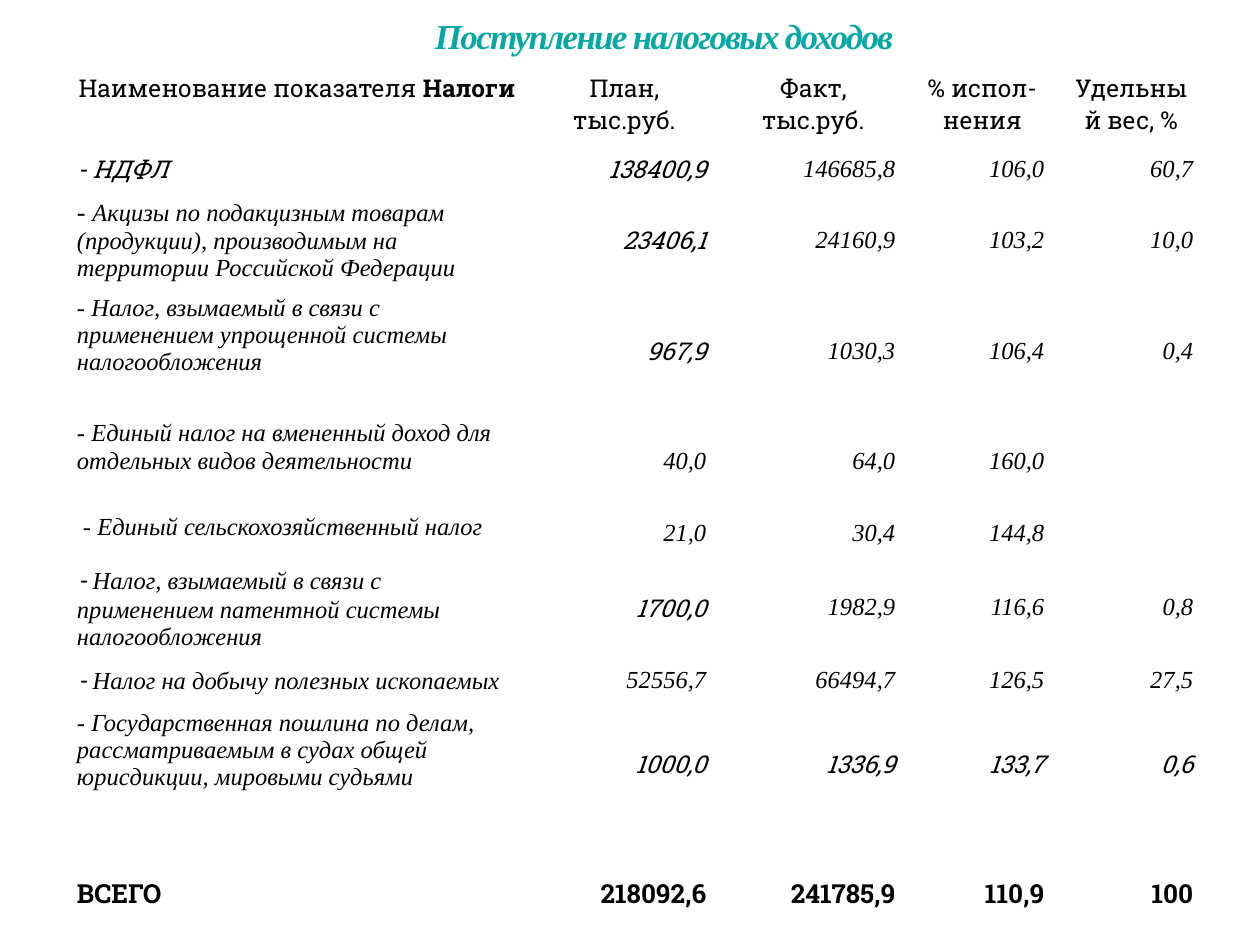
from dataclasses import dataclass

from lxml.etree import SubElement
from pptx import Presentation
from pptx.dml.color import RGBColor as Rgb
from pptx.enum.text import MSO_ANCHOR as Anchor, PP_ALIGN as Align
from pptx.oxml.ns import qn
from pptx.util import Emu, Pt

PX = 914400 // 126
HUES = {"text": "000000", "title": "04A8A4", "edge": "AFCCDE"}
SLAB, TIMES = "Roboto Slab", "Times New Roman"
FACES = {"S": SLAB, "T": TIMES}


@dataclass(frozen=True)
class Style:
    face: str = TIMES
    size: int = 14
    bold: bool = False
    slant: bool = True
    hue: str = "text"


@dataclass(frozen=True)
class Part:
    text: str
    style: Style


@dataclass(frozen=True)
class Row:
    high: int
    label: list[Part]
    vals: tuple[str, ...] = ()
    faces: str = "TTTT"
    pad: int = 13


HEAD = Style(SLAB, slant=False)
STRONG = Style(SLAB, bold=True, slant=False)
TOTAL = Style(SLAB, 15, True, False)
BODY, SLANT = Style(), Style(SLAB)
PLAIN, LARGE = Style(slant=False), Style(size=15, slant=False)


def px(num: int) -> Emu:
    return Emu(num * PX)


def tax(name: str, dash: Style = PLAIN) -> list[Part]:
    return [Part("- ", dash), Part(name, BODY)]


# Table data
WIDTHS = (466, 189, 189, 149, 149)
HEADS = ("План,\nтыс.руб.", "Факт,\nтыс.руб.", "% испол-нения", "Удельный вес, %")
HEAD_HIGH = 81
ROWS = [
    Row(46, [Part("- НДФЛ", SLANT)], ("138400,9", "146685,8", "106,0", "60,7"), "STTT"),
    Row(96, tax("Акцизы по подакцизным товарам (продукции), производимым на "
                "территории Российской Федерации", LARGE),
        ("23406,1", "24160,9", "103,2", "10,0"), "STTT"),
    Row(126, tax("Налог, взымаемый в связи с применением упрощенной системы "
                 "налогообложения"),
        ("967,9", "1030,3", "106,4", "0,4"), "STTT"),
    Row(94, tax("Единый налог на вмененный доход для отдельных видов деятельности"),
        ("40,0", "64,0", "160,0")),
    Row(50, [Part("- Единый сельскохозяйственный налог", BODY)],
        ("21,0", "30,4", "144,8"), pad=19),
    Row(98, tax("Налог, взымаемый в связи с применением патентной системы "
                "налогообложения", SLANT),
        ("1700,0", "1982,9", "116,6", "0,8"), "STTT"),
    Row(46, tax("Налог на добычу полезных ископаемых", SLANT),
        ("52556,7", "66494,7", "126,5", "27,5")),
    Row(122, tax("Государственная пошлина по делам, рассматриваемым в судах общей "
                 "юрисдикции, мировыми судьями", BODY),
        ("1000,0", "1336,9", "133,7", "0,6"), "SSSS"),
    Row(45, []),
    Row(47, [Part("ВСЕГО", TOTAL)], ("218092,6", "241785,9", "110,9", "100")),
]


def paint(run, style: Style) -> None:
    font = run.font
    font.name, font.size = style.face, Pt(style.size)
    font.bold, font.italic = style.bold, style.slant
    font.color.rgb = Rgb.from_string(HUES[style.hue])


def write(frame, text: str, style: Style, align: Align) -> None:
    frame.text = text
    for para in frame.paragraphs:
        para.alignment = align
        for run in para.runs:
            paint(run, style)


def join(frame, parts: list[Part], align: Align) -> None:
    para = frame.paragraphs[0]
    para.alignment = align
    for part in parts:
        run = para.add_run()
        run.text = part.text
        paint(run, part.style)


def add_title(slide) -> None:
    box = slide.shapes.add_textbox(px(203), px(0), px(922), px(70))
    frame = box.text_frame
    frame.word_wrap = True
    frame.vertical_anchor = Anchor.MIDDLE
    write(frame, "Поступление налоговых доходов",
          Style(size=20, bold=True, hue="title"), Align.CENTER)
    # Tight spacing and a faint letter outline
    props = frame.paragraphs[0].runs[0].font._element
    props.set("spc", "-100")
    line = SubElement(props, qn("a:ln"), w="3175")
    fill = SubElement(line, qn("a:solidFill"))
    tone = SubElement(fill, qn("a:srgbClr"), val=HUES["edge"])
    SubElement(tone, qn("a:alpha"), val="25000")
    props.insert(0, line)


def add_grid(slide):
    highs = [HEAD_HIGH] + [row.high for row in ROWS]
    grid = slide.shapes.add_table(len(highs), len(WIDTHS), px(64), px(65),
                                  px(sum(WIDTHS)), px(sum(highs))).table
    grid.first_row = grid.horz_banding = False
    for col, wide in zip(grid.columns, WIDTHS):
        col.width = px(wide)
    for line, high in zip(grid.rows, highs):
        line.height = px(high)
    for cell in grid.iter_cells():
        cell.fill.background()
    return grid


def fill_head(grid) -> None:
    join(grid.cell(0, 0).text_frame,
         [Part("Наименование показателя ", HEAD), Part("Налоги", STRONG)], Align.CENTER)
    for col, text in enumerate(HEADS, 1):
        write(grid.cell(0, col).text_frame, text, HEAD, Align.CENTER)


def fill_row(grid, num: int, row: Row) -> None:
    name = grid.cell(num, 0)
    name.margin_left = px(row.pad)
    join(name.text_frame, row.label, Align.LEFT)
    for col, (text, face) in enumerate(zip(row.vals, row.faces), 1):
        cell = grid.cell(num, col)
        cell.vertical_anchor = Anchor.MIDDLE
        style = TOTAL if row is ROWS[-1] else Style(FACES[face])
        write(cell.text_frame, text, style, Align.RIGHT)
    # Empty cells must not stretch their row
    for col in range(len(WIDTHS)):
        cell = grid.cell(num, col)
        if not cell.text:
            cell.margin_top = cell.margin_bottom = 0


def main() -> None:
    deck = Presentation()
    deck.slide_width, deck.slide_height = px(1260), px(945)
    slide = deck.slides.add_slide(deck.slide_layouts[6])
    grid = add_grid(slide)
    fill_head(grid)
    for num, row in enumerate(ROWS, 1):
        fill_row(grid, num, row)
    add_title(slide)
    deck.save("out.pptx")


if __name__ == "__main__":
    main()
